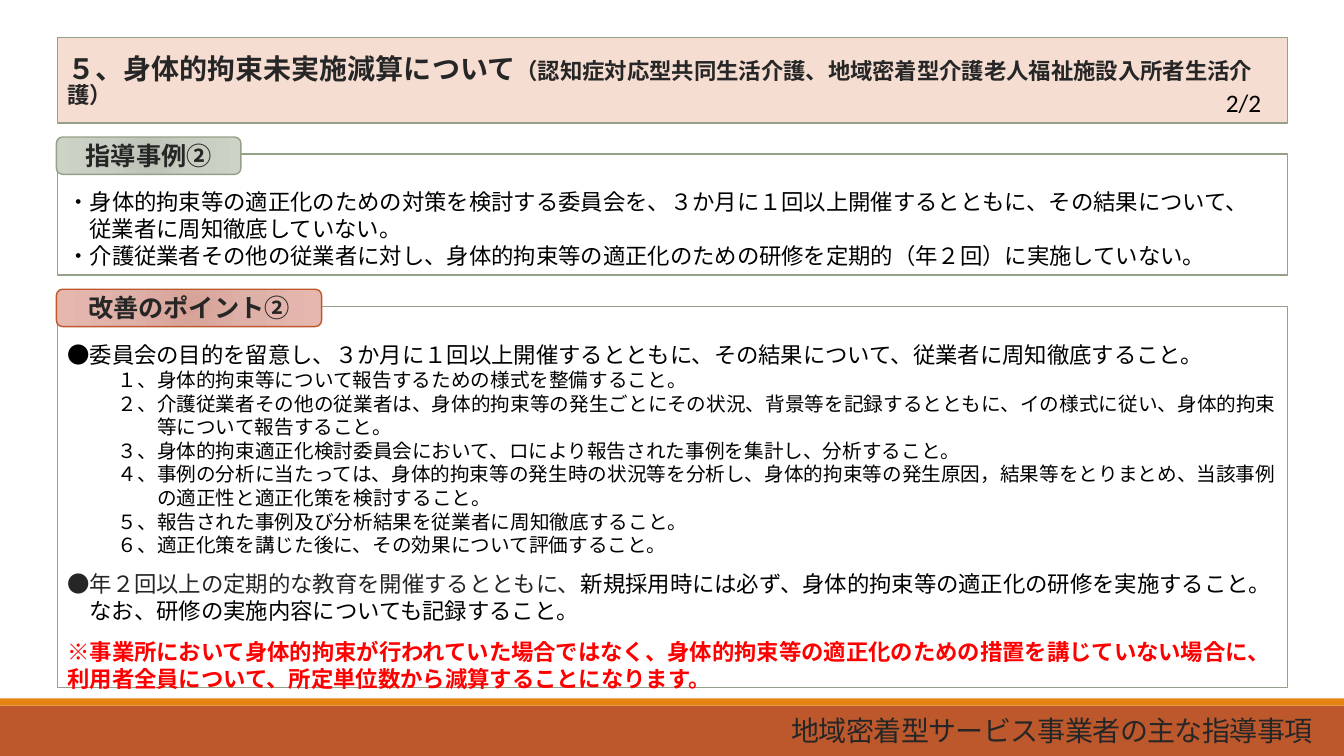
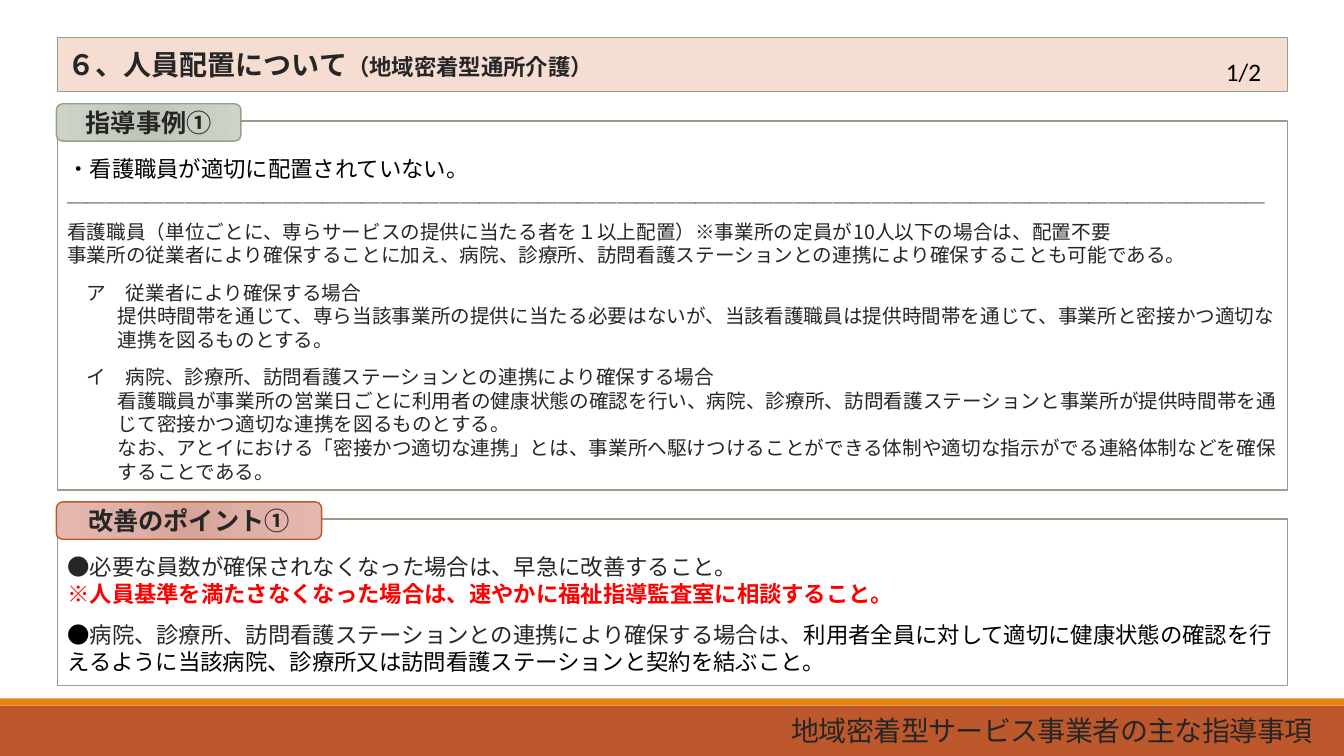
from pptx import Presentation
from pptx.dml.color import RGBColor
from pptx.enum.shapes import MSO_SHAPE as SHAPE
from pptx.enum.text import MSO_ANCHOR as ANCHOR, PP_ALIGN as ALIGN
from pptx.oxml import parse_xml
from pptx.oxml.ns import nsdecls, qn
from pptx.util import Inches, Pt

# Shared look
JP, LATIN = "Noto Sans CJK JP", "Calibri"
DARK, BLACK, RED, WHITE = "262626", "000000", "FF0000", "FFFFFF"
RUST, ORANGE, SAGE, PEACH = "BD582C", "E48312", "94A088", "F5DDD2"
W, H = 13.33, 7.5
LEFT, WIDTH = 0.57, 12.2
TITLE_TOP, TAG_H, TAG_RISE, PAGE_H = 0.37, 0.37, 0.17, 0.4
BAND_TOP, STRIPE_H = 7, 0.07
FOOTER = "地域密着型サービス事業者の主な指導事項"

# Tag label, width, line and gradient stops
CASE = ("指導事例", 1.83, SAGE, ("BBC3B5", "C7CDC1", "CDD4C7"))
POINT = ("改善のポイント", 2.63, RUST, ("D7A197", "DEB1A8", "E6B7AE"))

# Paragraph styles: size, left margin, first-line indent
BODY, BODY_IN = (16, 0, 0), (16, 0.22, 0)
NOTE, NOTE_IN = (14, 0, 0), (14, 0.19, 0)
SUB, ITEM = (14, 0.5, 0), (14, 0.89, -0.39)
GAP = 9.8  # points between groups of paragraphs

# Slides: title, subtitle, title height, page, panels
# Panel: tag, number, top, height, paragraphs (style, space before, runs)
SLIDES = [
    ("５、身体的拘束未実施減算について",
     "（認知症対応型共同生活介護、地域密着型介護老人福祉施設入所者生活介護）", 0.85, "2/2", [
        (CASE, "②", 1.53, 1.2, [
            (BODY, 0, [("・身体的拘束等の適正化のための対策を検討する委員会を、３か月に１回以上開催するとともに、その結果について、", BLACK)]),
            (BODY_IN, 0, [("従業者に周知徹底していない。", BLACK)]),
            (BODY, 0, [("・介護従業者その他の従業者に対し、身体的拘束等の適正化のための研修を定期的（年２回）に実施していない。", BLACK)]),
        ]),
        (POINT, "②", 3.04, 3.78, [
            (BODY, 0, [("●委員会の目的を留意し、３か月に１回以上開催するとともに、その結果について、従業者に周知徹底すること。", BLACK)]),
            (ITEM, 0, [("１、身体的拘束等について報告するための様式を整備すること。", BLACK)]),
            (ITEM, 0, [("２、介護従業者その他の従業者は、身体的拘束等の発生ごとにその状況、背景等を記録するとともに、イの様式に従い、身体的拘束等について報告すること。", BLACK)]),
            (ITEM, 0, [("３、身体的拘束適正化検討委員会において、ロにより報告された事例を集計し、分析すること。", BLACK)]),
            (ITEM, 0, [("４、事例の分析に当たっては、身体的拘束等の発生時の状況等を分析し、身体的拘束等の発生原因，結果等をとりまとめ、当該事例の適正性と適正化策を検討すること。", BLACK)]),
            (ITEM, 0, [("５、報告された事例及び分析結果を従業者に周知徹底すること。", BLACK)]),
            (ITEM, 0, [("６、適正化策を講じた後に、その効果について評価すること。", BLACK)]),
            (BODY, GAP, [("●年２回以上の定期的な教育を開催するとともに、", DARK),
                         ("新規採用時には必ず、身体的拘束等の適正化の研修を実施すること。", BLACK)]),
            (BODY_IN, 0, [("なお、研修の実施内容についても記録すること。", BLACK)]),
            (BODY, GAP, [("※事業所において身体的拘束が行われていた場合ではなく、身体的拘束等の適正化のための措置を講じていない場合に、利用者全員について、所定単位数から減算することになります。", RED)]),
        ]),
    ]),
    ("６、人員配置について", "（地域密着型通所介護）", 0.54, "1/2", [
        (CASE, "①", 1.2, 3.66, [
            (BODY, 0, [("・看護職員が適切に配置されていない。", BLACK)]),
            (NOTE, 0, [("＿" * 61, DARK)]),
            (NOTE, GAP, [("看護職員（単位ごとに、専らサービスの提供に当たる者を１以上配置）※事業所の定員が10人以下の場合は、配置不要", DARK)]),
            (NOTE, 0, [("事業所の従業者により確保することに加え、病院、診療所、訪問看護ステーションとの連携により確保することも可能である。", DARK)]),
            (NOTE_IN, GAP, [("ア　従業者により確保する場合", DARK)]),
            (SUB, 0, [("提供時間帯を通じて、専ら当該事業所の提供に当たる必要はないが、当該看護職員は提供時間帯を通じて、事業所と密接かつ適切な連携を図るものとする。", DARK)]),
            (NOTE_IN, GAP, [("イ　病院、診療所、訪問看護ステーションとの連携により確保する場合", DARK)]),
            (SUB, 0, [("看護職員が事業所の営業日ごとに利用者の健康状態の確認を行い、病院、診療所、訪問看護ステーションと事業所が提供時間帯を通じて密接かつ適切な連携を図るものとする。", DARK)]),
            (SUB, 0, [("なお、アとイにおける「密接かつ適切な連携」とは、事業所へ駆けつけることができる体制や適切な指示がでる連絡体制などを確保することである。", DARK)]),
        ]),
        (POINT, "①", 5.15, 1.65, [
            (BODY, 0, [("●必要な員数が確保されなくなった場合は、早急に改善すること。", DARK)]),
            (BODY, 0, [("※人員基準を満たさなくなった場合は、速やかに福祉指導監査室に相談すること。", RED)]),
            (BODY, GAP, [("●", BLACK),
                         ("病院、診療所、訪問看護ステーションとの連携により確保する場合は、", DARK),
                         ("利用者全員に対して適切に健康状態の確認を行えるように当該病院、診療所又は訪問看護ステーションと契約を結ぶこと。", BLACK)]),
        ]),
    ]),
]


def add_box(s, x, y, w, h, fill=None, line=None, weight=1, kind=SHAPE.RECTANGLE):
    """Plain shape; fill is one hex colour or a tuple of gradient stops."""
    sp = s.shapes.add_shape(kind, Inches(x), Inches(y), Inches(w), Inches(h))
    sp.shadow.inherit = False
    if isinstance(fill, tuple):
        stops = "".join(f'<a:gs pos="{pos}"><a:srgbClr val="{c}"/></a:gs>'
                        for pos, c in zip((0, 45000, 100000), fill))
        sp._element.spPr.insert(2, parse_xml(
            f'<a:gradFill {nsdecls("a")} rotWithShape="1"><a:gsLst>{stops}</a:gsLst>'
            '<a:path path="circle"><a:fillToRect l="100000" t="100000" r="100000" b="100000"/>'
            '</a:path></a:gradFill>'))
    else:
        sp.fill.solid()
        sp.fill.fore_color.rgb = RGBColor.from_string(fill)
    if line:
        sp.line.color.rgb = RGBColor.from_string(line)
        sp.line.width = Pt(weight)
    else:
        sp.line.fill.background()
    return sp


def add_run(p, text, size, color=DARK, bold=False, font=JP):
    r = p.add_run()
    r.text = text
    r.font.size, r.font.bold, r.font.name = Pt(size), bold, font
    r.font.color.rgb = RGBColor.from_string(color)
    rPr = r._r.get_or_add_rPr()
    rPr.set("lang", "ja-JP")
    ea = rPr.makeelement(qn("a:ea"), {"typeface": JP})
    rPr.find(qn("a:latin")).addnext(ea)
    return r


prs = Presentation()
prs.slide_width, prs.slide_height = Inches(W), Inches(H)

for title, subtitle, title_h, page, panels in SLIDES:
    s = prs.slides.add_slide(prs.slide_layouts[6])

    # Bottom bands
    add_box(s, 0, BAND_TOP, W, H - BAND_TOP, RUST)
    add_box(s, 0, BAND_TOP - STRIPE_H, W, STRIPE_H, ORANGE)

    # Title
    tf = add_box(s, LEFT, TITLE_TOP, WIDTH, title_h, PEACH, SAGE).text_frame
    tf.word_wrap, tf.vertical_anchor = True, ANCHOR.MIDDLE
    tf.margin_top = Inches(0.1)
    p = tf.paragraphs[0]
    p.alignment, p.line_spacing = ALIGN.LEFT, 0.83
    add_run(p, title, 20, bold=True)
    add_run(p, subtitle, 16, bold=True)

    # Footer
    tf = s.shapes.add_textbox(Inches(LEFT), Inches(7.04), Inches(12.54), Inches(0.46)).text_frame
    tf.word_wrap, tf.vertical_anchor = True, ANCHOR.MIDDLE
    p = tf.paragraphs[0]
    p.alignment, p.line_spacing = ALIGN.RIGHT, 0.85
    add_run(p, FOOTER, 20)._r.get_or_add_rPr().set("spc", "-50")

    # Panels, each with a tag on its top edge
    for (label, tag_w, tag_line, stops), number, top, height, paragraphs in panels:
        tf = add_box(s, LEFT, top, WIDTH, height, WHITE, SAGE, 1.25).text_frame
        tf.word_wrap, tf.vertical_anchor = True, ANCHOR.TOP
        tf.margin_top = Inches(0.34)
        for i, ((size, left, first), before, runs) in enumerate(paragraphs):
            p = tf.add_paragraph() if i else tf.paragraphs[0]
            p.alignment = ALIGN.LEFT
            p.line_spacing, p.space_before = Pt(size * 1.205), Pt(before)
            pPr = p._p.get_or_add_pPr()
            pPr.set("marL", str(Inches(left)))
            pPr.set("indent", str(Inches(first)))
            for text, color in runs:
                add_run(p, text, size, color, bold=color == RED)

        tf = add_box(s, LEFT - 0.01, top - TAG_RISE, tag_w, TAG_H, stops, tag_line,
                     kind=SHAPE.ROUNDED_RECTANGLE).text_frame
        tf.vertical_anchor = ANCHOR.MIDDLE
        p = tf.paragraphs[0]
        p.alignment = ALIGN.CENTER
        add_run(p, label + number, 18, bold=True)

    # Page count in the title's lower right corner
    tf = s.shapes.add_textbox(Inches(12.06), Inches(TITLE_TOP + title_h - PAGE_H),
                              Inches(0.71), Inches(PAGE_H)).text_frame
    tf.word_wrap = True
    add_run(tf.paragraphs[0], page, 18, BLACK, font=LATIN)

prs.save("out.pptx")
